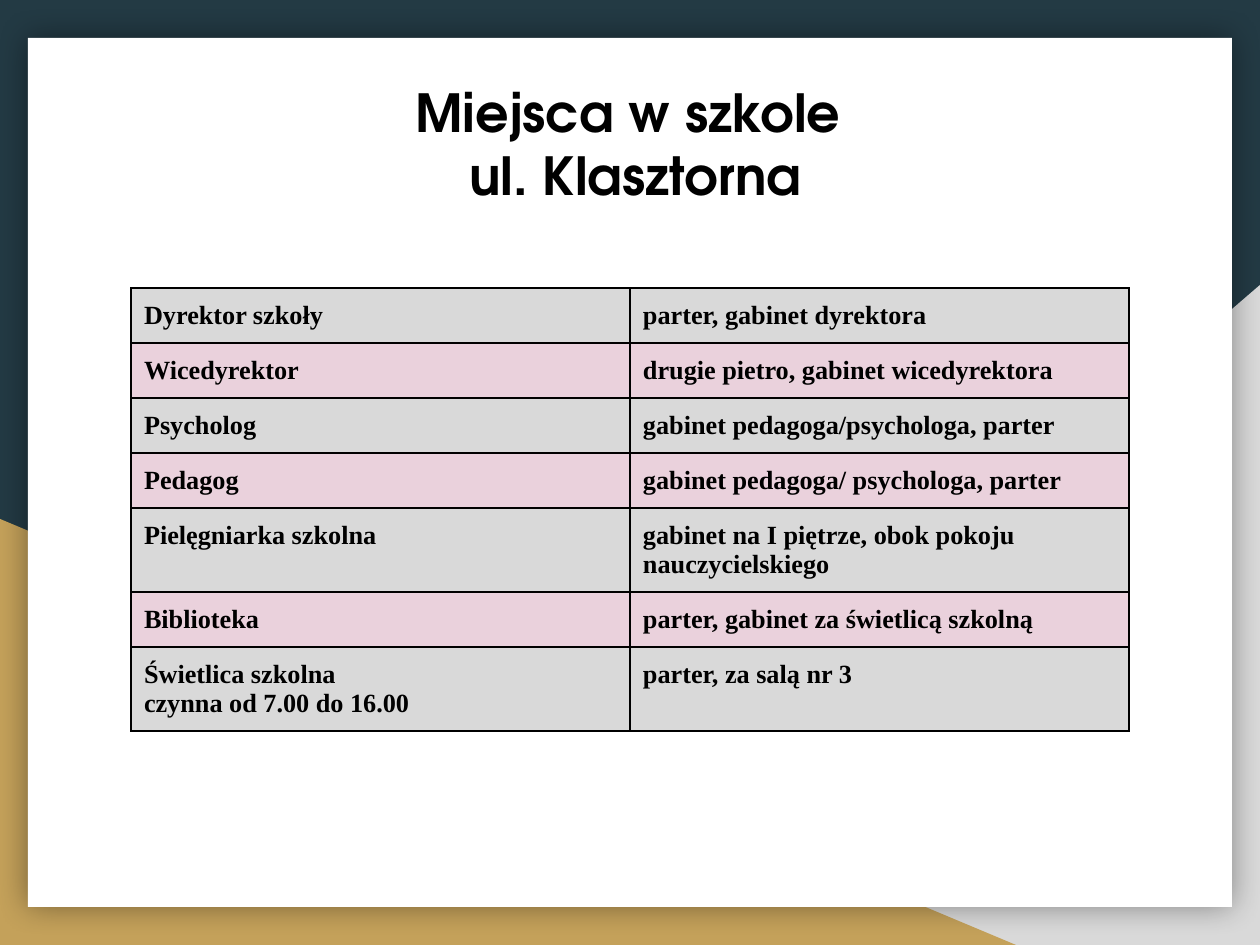
"""Build the school places slide with a titled two-column table."""
from typing import NamedTuple

from lxml.etree import SubElement
from pptx import Presentation
from pptx.dml.color import RGBColor
from pptx.enum.shapes import MSO_SHAPE as Shape
from pptx.enum.text import MSO_ANCHOR as Anchor, MSO_AUTO_SIZE as AutoSize, PP_ALIGN as Align
from pptx.oxml.ns import qn
from pptx.util import Emu, Pt

EMU_PER_PX = 914400 / 126
INSET = 13
ROW_HEIGHT = 53

NAVY = RGBColor(0x23, 0x3A, 0x44)
GREY = RGBColor(0xD9, 0xD9, 0xD9)
GOLD = RGBColor(0xC4, 0xA1, 0x5A)
PINK = RGBColor(0xEA, 0xD1, 0xDC)
WHITE = RGBColor(0xFF, 0xFF, 0xFF)
BLACK = RGBColor(0, 0, 0)


class Box(NamedTuple):
    left: int
    top: int
    width: int
    height: int


class Panel(NamedTuple):
    kind: Shape
    box: Box
    color: RGBColor
    flipped: bool = False
    shadowed: bool = False


class Place(NamedTuple):
    name: tuple[str, ...]
    location: str


PANELS = (
    Panel(Shape.RIGHT_TRIANGLE, Box(494, 285, 766, 660), GREY, flipped=True),
    Panel(Shape.RIGHT_TRIANGLE, Box(0, 519, 1016, 426), GOLD),
    Panel(Shape.RECTANGLE, Box(28, 38, 1204, 869), WHITE, shadowed=True),
)
TITLE_BOX = Box(111, 67, 1034, 174)
TITLE_LINES = ("Miejsca w szkole", " ul. Klasztorna")
PLACES = (
    Place(("Dyrektor szkoły",), "parter, gabinet dyrektora"),
    Place(("Wicedyrektor",), "drugie pietro, gabinet wicedyrektora"),
    Place(("Psycholog",), "gabinet pedagoga/psychologa, parter"),
    Place(("Pedagog",), "gabinet pedagoga/ psychologa, parter"),
    Place(("Pielęgniarka szkolna",), "gabinet na I piętrze, obok pokoju nauczycielskiego"),
    Place(("Biblioteka",), "parter, gabinet za świetlicą szkolną"),
    Place(("Świetlica szkolna", "czynna od 7.00 do 16.00"), "parter, za salą nr 3"),
)
TABLE_BOX = Box(131, 288, 998, ROW_HEIGHT * len(PLACES))


def px(length: int) -> Emu:
    """Turn pixels into EMU."""
    return Emu(round(length * EMU_PER_PX))


def scaled(box: Box) -> tuple[Emu, ...]:
    """Give the four measures of a box in EMU."""
    return tuple(px(length) for length in box)


def set_insets(holder) -> None:
    """Give a text frame or a cell equal margins."""
    for side in ("left", "top", "right", "bottom"):
        setattr(holder, f"margin_{side}", px(INSET))


def add_span(para, text: str, font: str, size: int) -> None:
    """Add one bold black run to a paragraph."""
    span = para.add_run()
    span.text = text
    span.font.name = font
    span.font.size = Pt(size)
    span.font.bold = True
    span.font.color.rgb = BLACK


def add_glow(shape) -> None:
    """Put a soft centred shadow around a shape."""
    effects = shape.element.spPr.find(qn("a:effectLst"))
    shadow = SubElement(effects, qn("a:outerShdw"), blurRad=str(Pt(18)), dist="0", dir="0",
                        algn="ctr", rotWithShape="0")
    color = SubElement(shadow, qn("a:srgbClr"), val=str(BLACK))
    SubElement(color, qn("a:alpha"), val="40000")


def add_panel(page, panel: Panel) -> None:
    """Draw one background panel."""
    shape = page.shapes.add_shape(panel.kind, *scaled(panel.box))
    shape.fill.solid()
    shape.fill.fore_color.rgb = panel.color
    shape.line.fill.background()
    shape.shadow.inherit = False
    if panel.flipped:
        shape.element.spPr.find(qn("a:xfrm")).set("flipH", "1")
    if panel.shadowed:
        add_glow(shape)


def fill_title(page) -> None:
    """Move the title to the front and write its lines."""
    title = page.shapes.title
    title.element.getparent().append(title.element)
    title.left, title.top, title.width, title.height = scaled(TITLE_BOX)
    frame = title.text_frame
    frame.word_wrap = True
    frame.auto_size = AutoSize.NONE
    frame.vertical_anchor = Anchor.TOP
    set_insets(frame)
    para = frame.paragraphs[0]
    para.alignment = Align.CENTER
    for index, line in enumerate(TITLE_LINES):
        if index:
            para.add_line_break()
        add_span(para, line, "TeX Gyre Adventor", 30)


def add_borders(cell) -> None:
    """Outline a cell with thin black lines."""
    properties = cell._tc.get_or_add_tcPr()
    for side in ("lnL", "lnR", "lnT", "lnB"):
        line = SubElement(properties, qn(f"a:{side}"), w=str(Pt(0.75)))
        SubElement(SubElement(line, qn("a:solidFill")), qn("a:srgbClr"), val=str(BLACK))


def fill_cell(cell, lines: tuple[str, ...], color: RGBColor) -> None:
    """Format a cell and write one paragraph for each line."""
    add_borders(cell)
    cell.fill.solid()
    cell.fill.fore_color.rgb = color
    set_insets(cell)
    frame = cell.text_frame
    for index, line in enumerate(lines):
        para = frame.add_paragraph() if index else frame.paragraphs[0]
        add_span(para, line, "Times New Roman", 15)


def add_places(page) -> None:
    """Add the table of places with alternating row colours."""
    table = page.shapes.add_table(len(PLACES), 2, *scaled(TABLE_BOX)).table
    table.first_row = False
    table.horz_banding = False
    for index, place in enumerate(PLACES):
        color = PINK if index % 2 else GREY
        fill_cell(table.cell(index, 0), place.name, color)
        fill_cell(table.cell(index, 1), (place.location,), color)


def main() -> None:
    """Build and save the deck."""
    deck = Presentation()
    deck.slide_width, deck.slide_height = px(1260), px(945)
    page = deck.slides.add_slide(deck.slide_layouts[5])
    page.background.fill.solid()
    page.background.fill.fore_color.rgb = NAVY
    for panel in PANELS:
        add_panel(page, panel)
    fill_title(page)
    add_places(page)
    deck.save("out.pptx")


if __name__ == "__main__":
    main()
